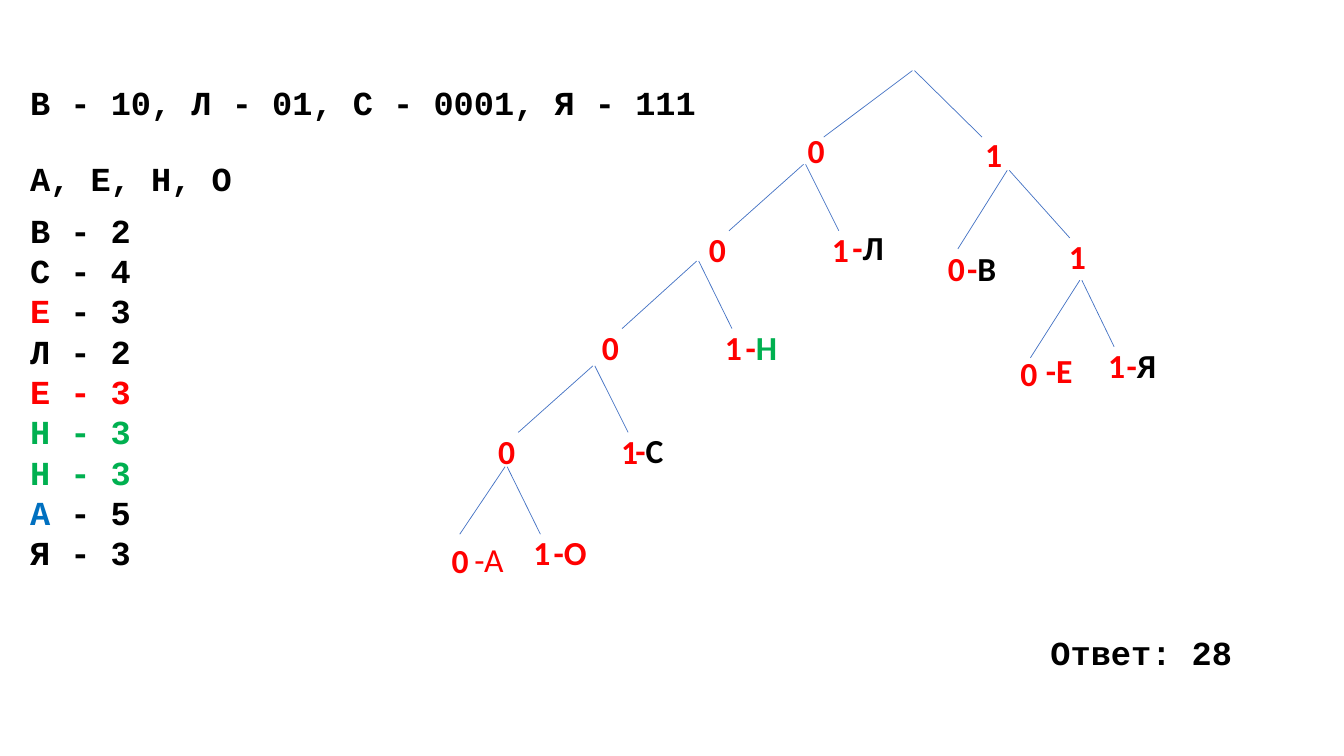
"""Build a slide with a prefix-code tree, letter code lengths and the answer."""
from lxml import etree
from pptx import Presentation, util as u
from pptx.dml.color import RGBColor
from pptx.enum import shapes, text
from pptx.oxml import ns

COLORS = {"black": "000000", "red": "FF0000", "green": "00B050", "blue": "0070C0",
          "branch": "4472C4", "outline": "5B9BD5"}
LIST_STYLE = {"name": "Courier New", "size": u.Pt(24), "bold": True}
TREE_STYLE = {"name": "Calibri", "size": u.Pt(24), "bold": True}
ROW_HEIGHT, DIGIT_WIDTH = 0.5, 0.37

presentation = Presentation()
presentation.slide_width, presentation.slide_height = u.Inches(13.33), u.Inches(7.5)
slide = presentation.slides.add_slide(presentation.slide_layouts[6])
column, row = presentation.slide_width / 13.33, presentation.slide_height / 7.5


def add_lines(left, top, width, height, lines, style, centered=False):
    box = slide.shapes.add_textbox(
        *(int(length) for length in (left * column, top * row, width * column, height * row)))
    frame = box.text_frame
    frame.word_wrap = not centered
    frame.auto_size = text.MSO_AUTO_SIZE.SHAPE_TO_FIT_TEXT
    for index, line in enumerate(lines):
        paragraph = frame.add_paragraph() if index else frame.paragraphs[0]
        paragraph.alignment = text.PP_ALIGN.CENTER if centered else text.PP_ALIGN.LEFT
        for words, color in line:
            run = paragraph.add_run()
            run.text = words
            for name, value in style.items():
                setattr(run.font, name, value)
            run.font.color.rgb = RGBColor.from_string(COLORS[color])
            if centered:
                outline = etree.Element(ns.qn("a:ln"), w=str(u.Pt(0.8)))
                fill = etree.SubElement(outline, ns.qn("a:solidFill"))
                etree.SubElement(fill, ns.qn("a:srgbClr"), val=COLORS["outline"])
                run.font._element.insert(0, outline)


for left, top, width, words in [
    (0.2, 0.76, 7.42, "В - 10, Л - 01, С - 0001, Я - 111"),
    (0.2, 1.52, 6.67, "А, Е, Н, О"),
    (10.32, 6.22, 2.27, "Ответ: 28"),
]:
    add_lines(left, top, width, ROW_HEIGHT, [[(words, "black")]], LIST_STYLE)

code_lengths = [
    ("В", 2, "black", "black"), ("С", 4, "black", "black"), ("Е", 3, "red", "black"),
    ("Л", 2, "black", "black"), ("Е", 3, "red", "red"), ("Н", 3, "green", "green"),
    ("Н", 3, "green", "green"), ("А", 5, "blue", "black"), ("Я", 3, "black", "black"),
]
add_lines(0.2, 2.03, 1.53, 3.74,
          [[(letter, letter_color), (f" - {length}", length_color)]
           for letter, length, letter_color, length_color in code_lengths], LIST_STYLE)

forks = [
    (9.06, 0.7, (8.17, 1.36), (9.74, 1.36)),
    (7.98, 1.63, (7.23, 2.29), (8.32, 2.29)),
    (10, 1.69, (9.5, 2.47), (10.61, 2.36)),
    (6.92, 2.59, (6.17, 3.26), (7.26, 3.26)),
    (5.89, 3.63, (5.14, 4.29), (6.23, 4.29)),
    (10.72, 2.78, (10.22, 3.55), (11.05, 3.44)),
    (5.02, 4.63, (4.56, 5.3), (5.36, 5.3)),
]
for apex_x, apex_y, *ends in forks:
    for offset, (end_x, end_y) in zip((-0.01, 0.01), ends):
        branch = slide.shapes.add_connector(
            shapes.MSO_CONNECTOR.STRAIGHT, int((apex_x + offset) * column), int(apex_y * row),
            int(end_x * column), int(end_y * row))
        branch.line.color.rgb = RGBColor.from_string(COLORS["branch"])
        branch.line.width = u.Pt(0.5)
        etree.SubElement(branch._element.spPr, ns.qn("a:effectLst"))

digits = {
    "0": [(7.91, 1.24), (6.93, 2.22), (9.3, 2.41), (5.87, 3.19), (4.84, 4.23),
          (10.02, 3.45), (4.38, 5.31)],
    "1": [(9.67, 1.28), (8.15, 2.22), (10.5, 2.29), (7.09, 3.19), (6.06, 4.23),
          (10.89, 3.37), (5.19, 5.23)],
}
for digit, places in digits.items():
    for left, top in places:
        add_lines(left, top, DIGIT_WIDTH, ROW_HEIGHT, [[(digit, "red")]], TREE_STYLE, True)

leaves = [
    ("В", "black", 9.49, 2.41, 0.49, True), ("С", "black", 6.2, 4.22, 0.48, True),
    ("Л", "black", 8.35, 2.2, 0.52, True), ("Я", "black", 11.07, 3.37, 0.5, True),
    ("Е", "red", 10.27, 3.42, 0.47, True), ("О", "red", 5.39, 5.23, 0.53, True),
    ("А", "red", 4.6, 5.3, 0.5, False), ("Н", "green", 7.29, 3.19, 0.52, True),
]
for letter, color, left, top, width, bold in leaves:
    label = [("-" + letter, color)] if color == "red" else [("-", "red"), (letter, color)]
    add_lines(left, top, width, ROW_HEIGHT, [label], {**TREE_STYLE, "bold": bold}, True)

presentation.save("out.pptx")
